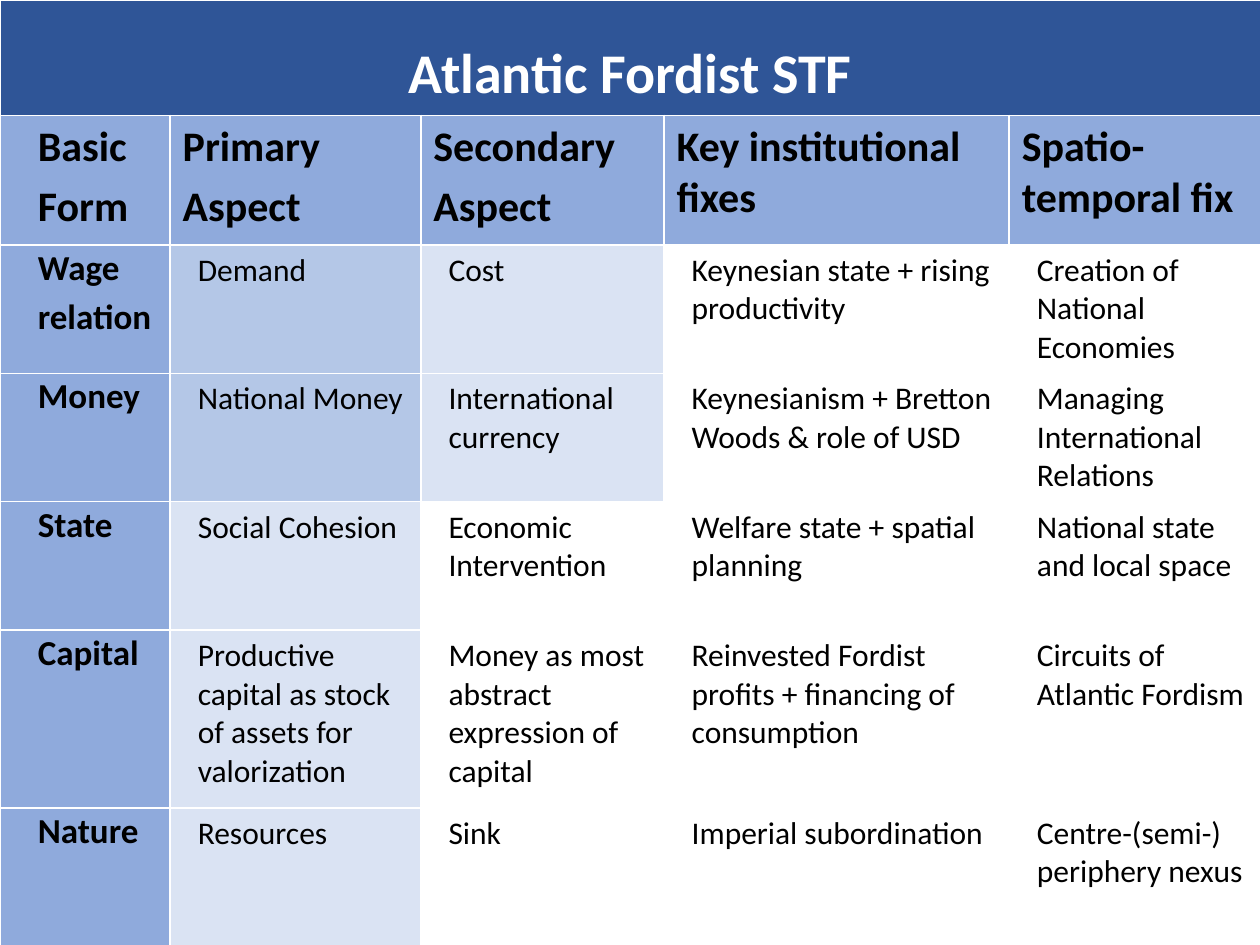
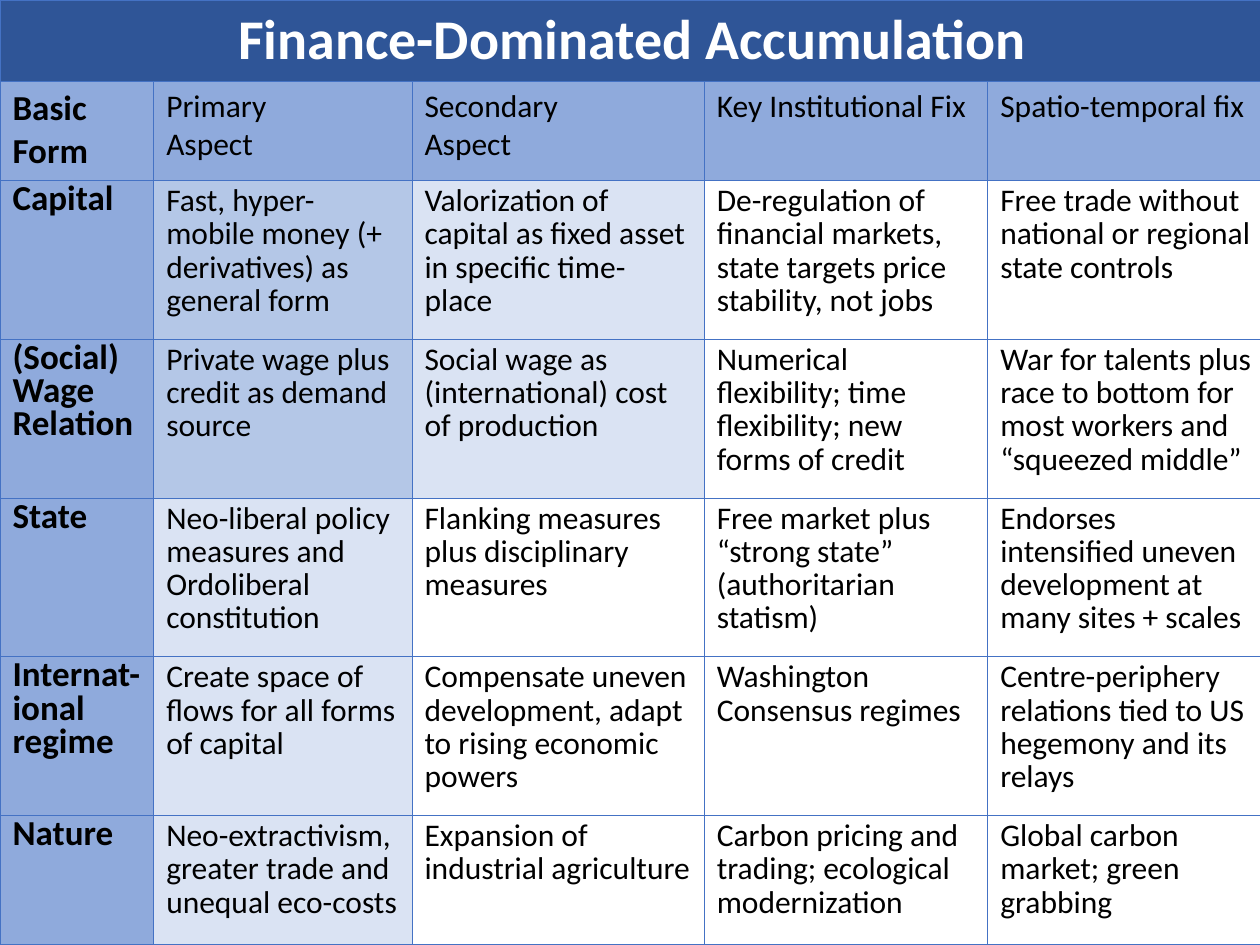
from dataclasses import dataclass

from lxml import etree
from pptx import Presentation
from pptx.dml.color import RGBColor
from pptx.enum import text
from pptx.oxml import ns
from pptx.util import Inches, Pt


@dataclass(frozen=True)
class Theme:
    font: str = "Calibri"
    band: str = "2F5597"
    head: str = "8FAADC"
    shades: tuple = ("B4C7E7", "DAE3F3", "FFFFFF")
    light: str = "FFFFFF"
    dark: str = "000000"
    title: int = 32
    label: int = 20
    body: int = 18


THEME = Theme()

FORDIST = {
    "title": "Atlantic Fordist STF",
    "heads": ["Basic\nForm", "Primary\nAspect", "Secondary\nAspect",
              "Key institutional fixes", "Spatio-temporal fix"],
    "rows": [
        ["Wage\nrelation", "Demand", "Cost",
         "Keynesian state + rising productivity",
         "Creation of National Economies"],
        ["Money", "National Money", "International currency",
         "Keynesianism + Bretton Woods & role of USD",
         "Managing International Relations"],
        ["State", "Social Cohesion", "Economic Intervention",
         "Welfare state + spatial planning",
         "National state and local space"],
        ["Capital", "Productive capital as stock of assets for valorization",
         "Money as most abstract expression of capital",
         "Reinvested Fordist profits + financing of consumption",
         "Circuits of Atlantic Fordism"],
        ["Nature", "Resources", "Sink", "Imperial subordination",
         "Centre-(semi-) periphery nexus"],
    ],
    "widths": [1.35, 1.99, 1.93, 2.74, 2],
    "heights": [0.91, 1.03, 1.02, 1.01, 1.02, 1.41, 1.1],
    "border": ("FFFFFF", 1),
    "title_line": 1.5, "head_gap": 4.8,
    "head_sizes": (24, 24), "head_bold": True,
    "line": 22, "gap": 6,
    "indents": (0.2, 0.12),
}

FINANCE = {
    "title": "Finance-Dominated Accumulation",
    "heads": ["Basic\nForm", "Primary\nAspect", "Secondary\nAspect",
              "Key Institutional Fix", "Spatio-temporal fix"],
    "rows": [
        ["Capital",
         "Fast, hyper-mobile money (+ derivatives) as general form",
         "Valorization of capital as fixed asset in specific time-place",
         "De-regulation of financial markets, state targets price stability, "
         "not jobs",
         "Free trade without national or regional state controls"],
        ["(Social) Wage Relation",
         "Private wage plus credit as demand source",
         "Social wage as (international) cost of production",
         "Numerical flexibility; time flexibility; new forms of credit",
         "War for talents plus race to bottom for most workers and "
         "“squeezed middle”"],
        ["State",
         "Neo-liberal policy measures and Ordoliberal constitution",
         "Flanking measures plus disciplinary measures",
         "Free market plus “strong state” (authoritarian statism)",
         "Endorses intensified uneven development at many sites + scales"],
        ["Internat-ional regime",
         "Create space of flows for all forms of capital",
         "Compensate uneven development, adapt to rising economic powers",
         "Washington Consensus regimes",
         "Centre-periphery relations tied to US hegemony and its relays"],
        ["Nature",
         "Neo-extractivism, greater trade and unequal eco-costs",
         "Expansion of industrial agriculture",
         "Carbon pricing and trading; ecological modernization",
         "Global carbon market; green grabbing"],
    ],
    "widths": [1.22, 2.05, 2.32, 2.25, 2.2],
    "heights": [0.64, 0.79] + [1.26] * 4 + [1.02],
    "border": ("4472C4", 0.5),
    "title_line": 1, "head_gap": 0,
    "head_sizes": (THEME.label, THEME.body), "head_bold": False,
    "line": 19, "gap": 0,
    "indents": (0, 0),
}


def edge(cell, color, width):
    """Draw the same border on all four sides; call before filling the cell."""
    props = cell._tc.get_or_add_tcPr()
    for side in "LRTB":
        line = etree.SubElement(props, ns.qn(f"a:ln{side}"), w=str(Pt(width)))
        fill = etree.SubElement(line, ns.qn("a:solidFill"))
        etree.SubElement(fill, ns.qn("a:srgbClr"), val=color)


def paint(cell, color):
    cell.fill.solid()
    cell.fill.fore_color.rgb = RGBColor.from_string(color)


def write(cell, words, size, bold, color=THEME.dark, line=1, gap=0,
          indent=0, align=text.PP_ALIGN.LEFT):
    cell.text_frame.text = words
    for para in cell.text_frame.paragraphs:
        para.alignment = align
        para.line_spacing = line
        para.space_before = Pt(gap)
        props = para._p.get_or_add_pPr()
        props.set("marL", str(Inches(indent)))
        props.set("indent", "0")
        for run in para.runs:
            run.font.name = THEME.font
            run.font.size = Pt(size)
            run.font.bold = bold
            run.font.color.rgb = RGBColor.from_string(color)


def shade(row, col):
    """Labels share one blue; the other cells fade to the right and downward."""
    if row == 0:
        return THEME.band
    if row == 1 or col == 0:
        return THEME.head
    return THEME.shades[min(col - 1 + (row > 3), 2)]


def build(deck, data):
    slide = deck.slides.add_slide(deck.slide_layouts[6])
    wide, high = data["widths"], data["heights"]
    table = slide.shapes.add_table(
        len(high), len(wide), 0, 0,
        Inches(sum(wide)), Inches(sum(high))).table
    table.first_row = table.horz_banding = False
    for col, size in zip(table.columns, wide):
        col.width = Inches(size)
    for row, size in zip(table.rows, high):
        row.height = Inches(size)
    for r in range(len(high)):
        for c in range(len(wide)):
            cell = table.cell(r, c)
            edge(cell, *data["border"])
            paint(cell, shade(r, c))

    table.cell(0, 0).merge(table.cell(0, len(wide) - 1))
    write(table.cell(0, 0), data["title"], THEME.title, True, THEME.light,
          line=data["title_line"], align=text.PP_ALIGN.CENTER)
    for c, words in enumerate(data["heads"]):
        write(table.cell(1, c), words, data["head_sizes"][c > 0],
              c == 0 or data["head_bold"], gap=data["head_gap"],
              indent=0 if c else data["indents"][0])
    for r, row in enumerate(data["rows"], 2):
        for c, words in enumerate(row):
            write(table.cell(r, c), words, THEME.body if c else THEME.label,
                  c == 0, line=Pt(data["line"]), gap=data["gap"],
                  indent=data["indents"][c > 0])


def main():
    deck = Presentation()
    deck.slide_width, deck.slide_height = Inches(10), Inches(7.5)
    for data in (FORDIST, FINANCE):
        build(deck, data)
    deck.save("out.pptx")


if __name__ == "__main__":
    main()
